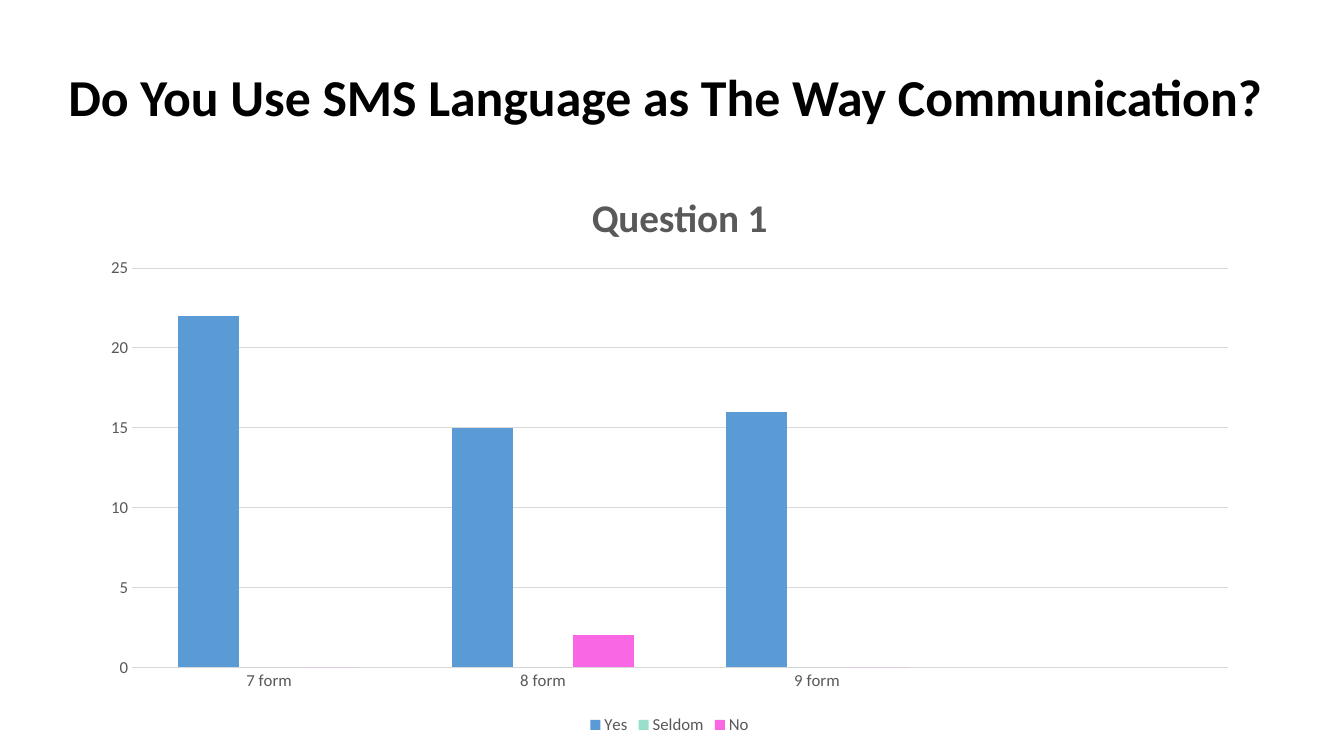
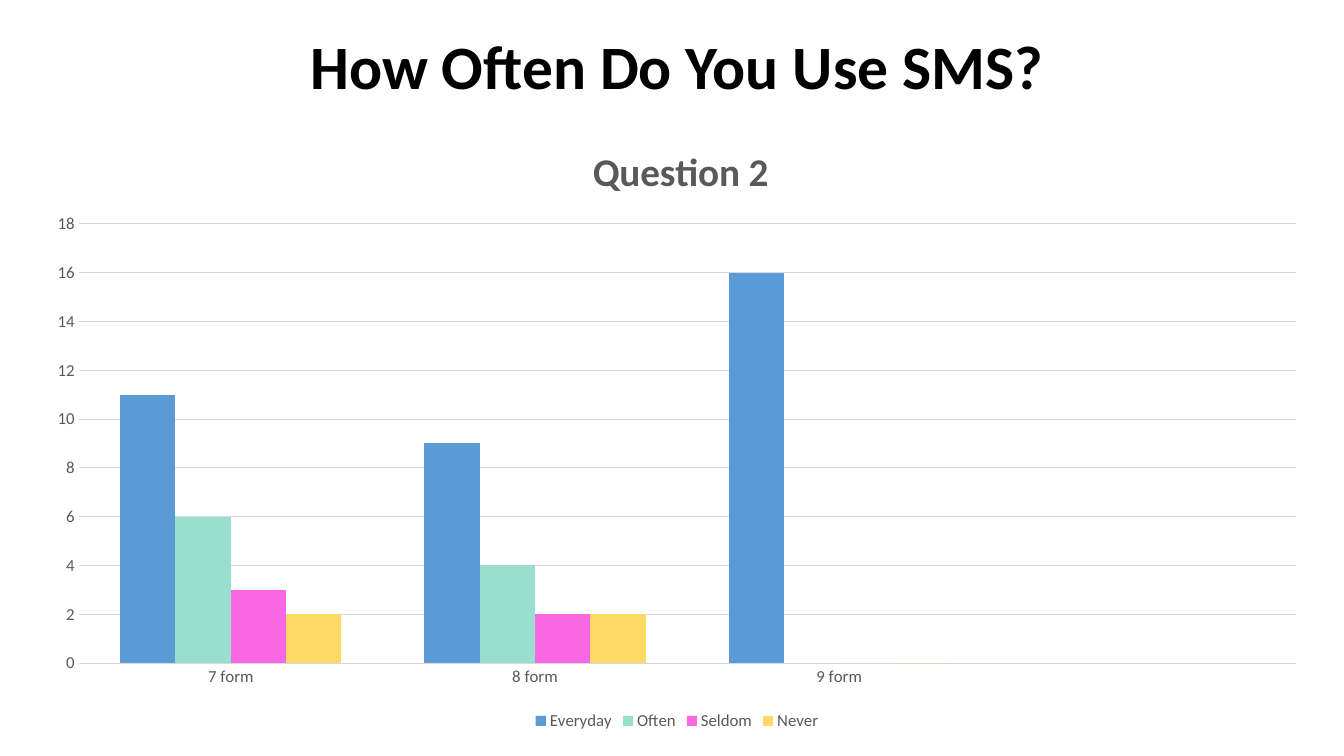
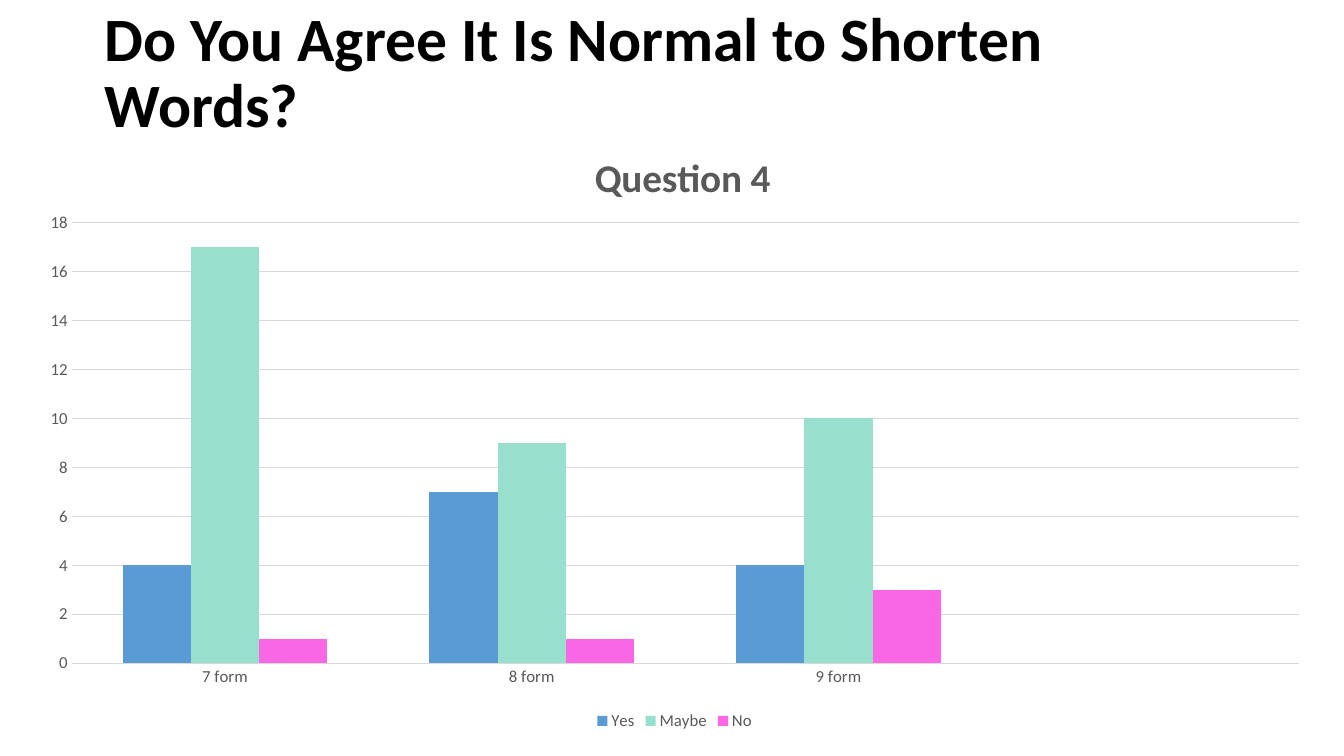
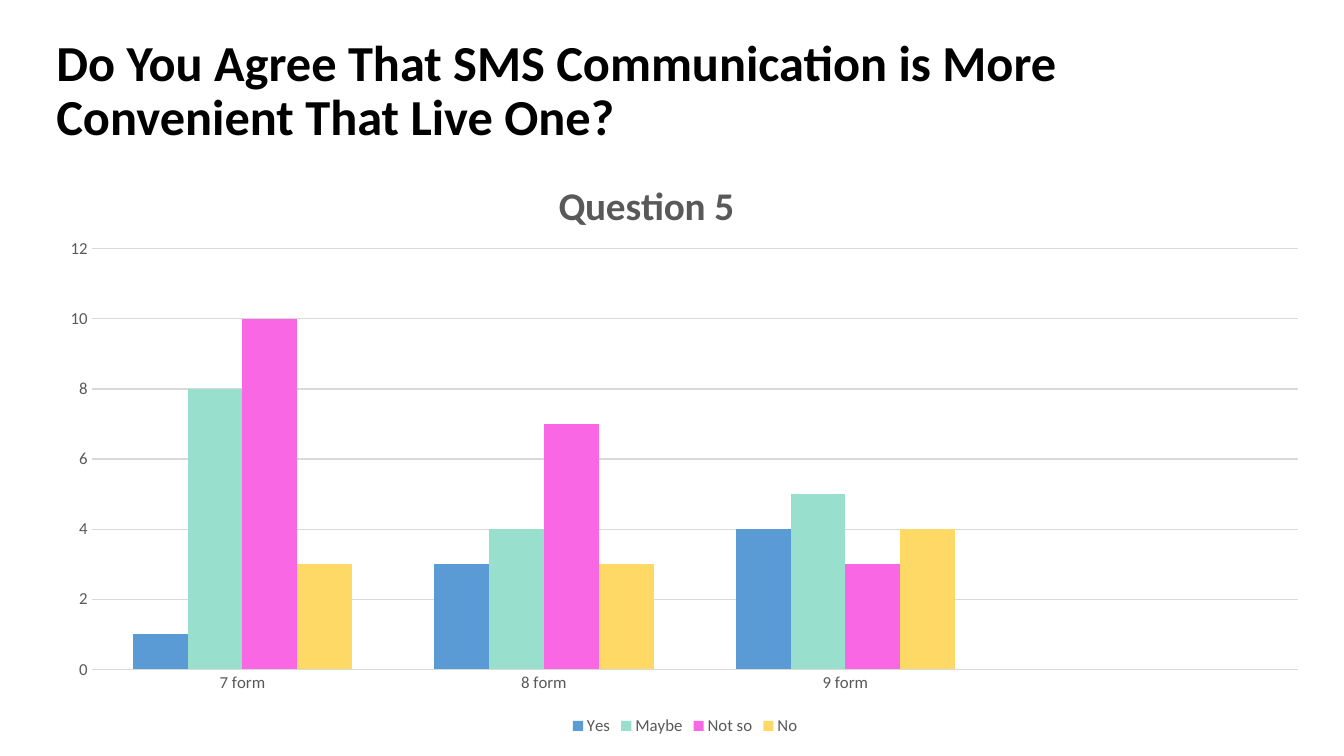
from pptx import Presentation
from pptx.chart.data import CategoryChartData
from pptx.dml.color import RGBColor
from pptx.enum.chart import XL_CHART_TYPE, XL_LEGEND_POSITION, XL_TICK_MARK
from pptx.enum.text import MSO_ANCHOR
from pptx.oxml import parse_xml
from pptx.oxml.ns import nsdecls
from pptx.util import Inches, Pt

# Shared look
FONT = "Calibri"
COLORS = {"title": "000000", "label": "595959", "grid": "D9D9D9"}
SERIES_COLORS = ["5B9BD5", "99DFCE", "F967E4", "FFD966"]
# The last group has no label and no values
FORMS = ["7 form", "8 form", "9 form", ""]

# Content: boxes are (left, top, width, height) in inches on the slide
QUESTIONS = [
    {"title": "Do You Use SMS Language as The Way Communication?", "size": 37,
     "title_box": (0.58, 0.26, 12.17, 1.45),
     "caption": "Question 1", "caption_at": (5.8, 1.83),
     "chart_box": (0.87, 1.58, 11.54, 5.75), "plot_box": (1.31, 2.66, 10.87, 3.96),
     "scale": (25, 5),
     "answers": {"Yes": (22, 15, 16), "Seldom": (0, 0, 0), "No": (0, 2, 0)}},
    {"title": "How Often Do You Use SMS?", "size": 44,
     "title_box": (2.98, 0.12, 7.5, 1.14),
     "caption": "Question 2", "caption_at": (5.81, 1.37),
     "chart_box": (0.32, 1.12, 12.79, 6.17), "plot_box": (0.78, 2.22, 12.07, 4.36),
     "scale": (18, 2),
     "answers": {"Everyday": (11, 9, 16), "Often": (6, 4, 0),
                 "Seldom": (3, 2, 0), "Never": (2, 2, 0)}},
    {"title": "Do You Agree It Is Normal to Shorten Words?", "size": 44,
     "title_box": (0.94, 0.23, 11.57, 1.02),
     "caption": "Question 4", "caption_at": (5.83, 1.43),
     "chart_box": (0.24, 1.25, 12.9, 6.04), "plot_box": (0.71, 2.21, 12.17, 4.37),
     "scale": (18, 2),
     "answers": {"Yes": (4, 7, 4), "Maybe": (17, 9, 10), "No": (1, 1, 3)}},
    {"title": "Do You Agree That SMS Communication is More Convenient That Live One?",
     "size": 36, "title_box": (0.46, 0.19, 12.41, 1.45),
     "caption": "Question 5", "caption_at": (5.47, 1.71),
     "chart_box": (0.46, 1.52, 12.67, 5.82), "plot_box": (0.91, 2.47, 11.96, 4.17),
     "scale": (12, 2),
     "answers": {"Yes": (1, 3, 4), "Maybe": (8, 4, 5),
                 "Not so": (10, 7, 3), "No": (3, 3, 4)}},
]


def color(value):
    return RGBColor.from_string(value)


def style_font(font, size, name, bold=False):
    font.name = FONT
    font.size = Pt(size)
    font.bold = bold
    font.color.rgb = color(COLORS[name])


def add_title(page, question):
    box = page.shapes.add_textbox(*map(Inches, question["title_box"]))
    frame = box.text_frame
    frame.word_wrap = True
    frame.vertical_anchor = MSO_ANCHOR.MIDDLE
    para = frame.paragraphs[0]
    para.text = question["title"]
    para.line_spacing = 0.9
    style_font(para.font, question["size"], "title", bold=True)


def layout_xml(chart_box, spot, inner=False):
    """Place a chart part: slide inches become fractions of the chart."""
    left, top, width, height = chart_box
    parts = {"x": (spot[0] - left) / width, "y": (spot[1] - top) / height}
    if inner:
        parts.update(w=spot[2] / width, h=spot[3] / height)
    target = '<c:layoutTarget val="inner"/>' if inner else ""
    modes = "".join(f'<c:{key}Mode val="edge"/>' for key in "xy")
    values = "".join(f'<c:{key} val="{value:.4f}"/>' for key, value in parts.items())
    return parse_xml(f'<c:layout {nsdecls("c")}><c:manualLayout>'
                     f"{target}{modes}{values}</c:manualLayout></c:layout>")


def set_layout(parent, layout, position):
    for old in parent.findall(layout.tag):
        parent.remove(old)
    parent.insert(position, layout)


def add_chart(page, question):
    data = CategoryChartData()
    data.categories = FORMS
    for name, values in question["answers"].items():
        data.add_series(name, (*values, None))
    box = question["chart_box"]
    chart = page.shapes.add_chart(
        XL_CHART_TYPE.COLUMN_CLUSTERED, *map(Inches, box), data).chart
    style_font(chart.font, 12, "label")

    # Caption
    chart.has_title = True
    para = chart.chart_title.text_frame.paragraphs[0]
    para.text = question["caption"]
    style_font(para.font, 28, "label", bold=True)
    chart.chart_title.include_in_layout = False
    set_layout(chart.chart_title._element,
               layout_xml(box, question["caption_at"]), 1)

    # Columns
    plot = chart.plots[0]
    plot.gap_width = 150
    plot.overlap = 0
    plot.vary_by_categories = False
    for series, fill in zip(plot.series, SERIES_COLORS):
        series.format.fill.solid()
        series.format.fill.fore_color.rgb = color(fill)
    set_layout(chart._chartSpace.chart.plotArea,
               layout_xml(box, question["plot_box"], inner=True), 0)

    # Axes
    for axis in (chart.category_axis, chart.value_axis):
        axis.major_tick_mark = axis.minor_tick_mark = XL_TICK_MARK.NONE
        axis.format.line.fill.background()
        style_font(axis.tick_labels.font, 12, "label")
    values = chart.value_axis
    values.minimum_scale = 0
    values.maximum_scale, values.major_unit = question["scale"]
    grid = values.major_gridlines.format.line
    grid.width = Pt(0.75)
    grid.color.rgb = color(COLORS["grid"])

    # Legend
    chart.has_legend = True
    chart.legend.position = XL_LEGEND_POSITION.BOTTOM
    chart.legend.include_in_layout = False
    style_font(chart.legend.font, 12, "label")


def main():
    deck = Presentation()
    deck.slide_width, deck.slide_height = Inches(13.33), Inches(7.5)
    for question in QUESTIONS:
        page = deck.slides.add_slide(deck.slide_layouts[6])
        add_title(page, question)
        add_chart(page, question)
    deck.save("out.pptx")


if __name__ == "__main__":
    main()
